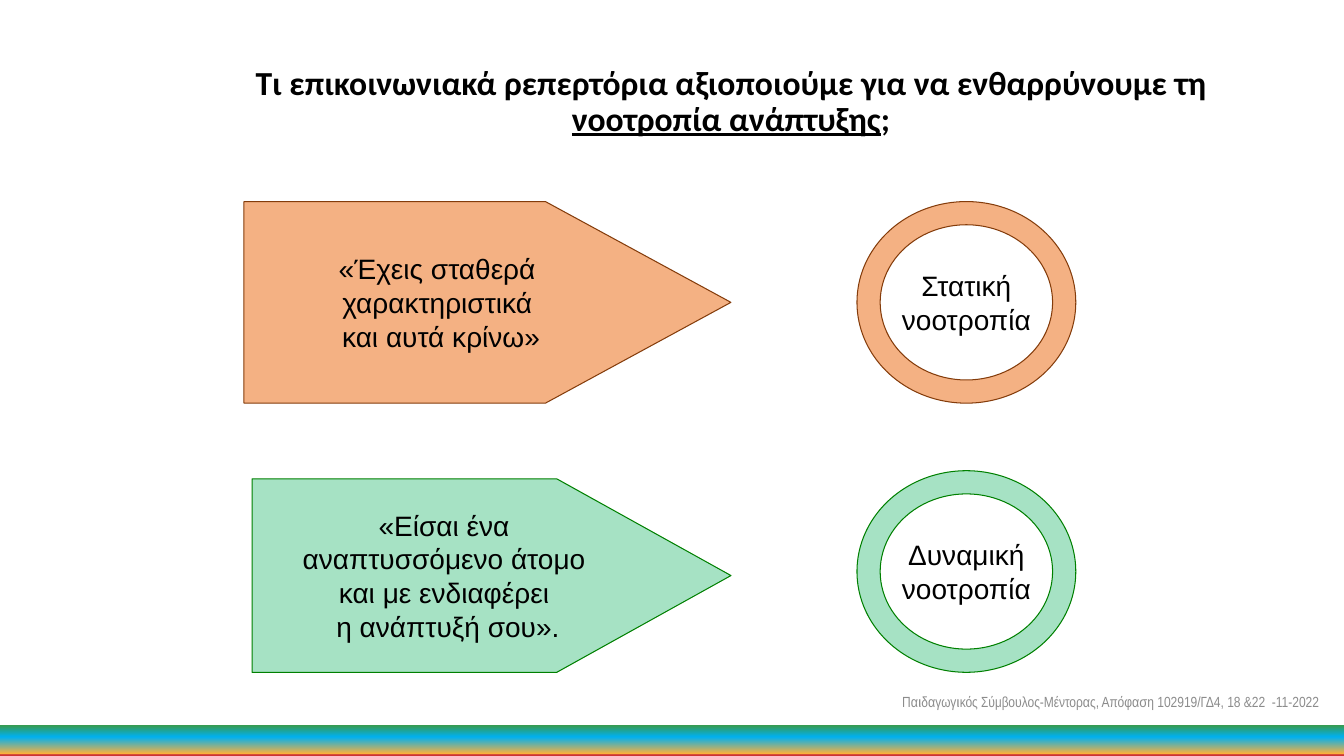
from dataclasses import dataclass

from lxml.etree import SubElement
from pptx import Presentation
from pptx.dml.color import RGBColor
from pptx.enum.shapes import MSO_SHAPE as Preset
from pptx.enum.text import MSO_ANCHOR as Anchor, PP_ALIGN as Align
from pptx.oxml.ns import qn
from pptx.shapes.autoshape import Shape
from pptx.slide import Slide
from pptx.text.text import TextFrame
from pptx.util import Inches, Pt

SLIDE_W, SLIDE_H = 13.33, 7.5
BLACK = "000000"


@dataclass(frozen=True)
class Box:
    left: float
    top: float
    width: float
    height: float

    def lengths(self) -> list[Inches]:
        return [Inches(v) for v in (self.left, self.top, self.width, self.height)]


@dataclass(frozen=True)
class Figure:
    preset: Preset
    box: Box
    adjustment: float
    text: str


@dataclass(frozen=True)
class Mindset:
    fill: str
    line: str
    phrase: Figure
    name: Figure


MINDSETS = [
    Mindset(
        "F4B183", "843C0B",
        Figure(Preset.PENTAGON, Box(2.42, 2, 4.83, 2), 0.92,
               "«Έχεις σταθερά \nχαρακτηριστικά \nκαι αυτά κρίνω»"),
        Figure(Preset.DONUT, Box(8.5, 2, 2.17, 2), 0.115, "Στατική\nνοοτροπία"),
    ),
    Mindset(
        "A6E2C4", "008000",
        Figure(Preset.PENTAGON, Box(2.5, 4.75, 4.75, 1.92), 0.9,
               "«Είσαι ένα \nαναπτυσσόμενο άτομο \nκαι με ενδιαφέρει \nη ανάπτυξή σου»."),
        Figure(Preset.DONUT, Box(8.5, 4.67, 2.17, 2), 0.115, "Δυναμική\nνοοτροπία"),
    ),
]

TITLE_PARTS = [
    ("Τι επικοινωνιακά ρεπερτόρια αξιοποιούμε για να ενθαρρύνουμε τη ", False),
    ("νοοτροπία ανάπτυξης", True),
    (";", False),
]
FOOTER = "Παιδαγωγικός Σύμβουλος-Μέντορας, Απόφαση 102919/ΓΔ4, 18 &22  -11-2022"
BAND_STOPS = [(0, "399A48"), (39, "00B0F0"), (93, "FBB03B"), (96, "CC3333")]


def rgb(color: str) -> RGBColor:
    return RGBColor.from_string(color)


def style_text(frame: TextFrame, font: str, size: float, color: str,
               align: Align, wrap: bool) -> None:
    frame.word_wrap = wrap
    frame.vertical_anchor = Anchor.MIDDLE
    for paragraph in frame.paragraphs:
        paragraph.alignment = align
        for run in paragraph.runs:
            run.font.name = font
            run.font.size = Pt(size)
            run.font.color.rgb = rgb(color)


def add_preset(slide: Slide, preset: Preset, box: Box) -> Shape:
    shape = slide.shapes.add_shape(preset, *box.lengths())
    shape.shadow.inherit = False
    return shape


def add_figure(slide: Slide, figure: Figure, fill: str, line: str) -> None:
    shape = add_preset(slide, figure.preset, figure.box)
    shape.adjustments[0] = figure.adjustment
    shape.fill.solid()
    shape.fill.fore_color.rgb = rgb(fill)
    shape.line.color.rgb = rgb(line)
    shape.line.width = Pt(0.75)
    shape.text_frame.text = figure.text
    style_text(shape.text_frame, "Arial", 20, BLACK, Align.CENTER, wrap=False)


def add_title(slide: Slide) -> None:
    frame = slide.shapes.add_textbox(*Box(2.25, 0.29, 10, 1.45).lengths()).text_frame
    heading = frame.paragraphs[0]
    heading.line_spacing = 0.9
    for text, underlined in TITLE_PARTS:
        run = heading.add_run()
        run.text = text
        run.font.bold = True
        run.font.underline = underlined
    style_text(frame, "Calibri", 24, BLACK, Align.CENTER, wrap=True)


def add_footer(slide: Slide) -> None:
    frame = slide.shapes.add_textbox(*Box(8.85, 6.76, 4.48, 0.4).lengths()).text_frame
    frame.text = FOOTER
    style_text(frame, "Arial Narrow", 10.5, "8C8C8C", Align.LEFT, wrap=True)


def add_band(slide: Slide) -> None:
    """Add the bottom strip with its vertical four-colour gradient."""
    height = 0.31
    band = add_preset(slide, Preset.RECTANGLE, Box(0, SLIDE_H - height, SLIDE_W, height))
    band.line.fill.background()
    band.fill.gradient()
    band.fill.gradient_angle = 270
    stops = band._element.spPr.find(qn("a:gradFill")).find(qn("a:gsLst"))
    for stop in list(stops):
        stops.remove(stop)
    for percent, color in BAND_STOPS:
        stop = SubElement(stops, qn("a:gs"), pos=str(percent * 1000))
        SubElement(stop, qn("a:srgbClr"), val=color)


def main() -> None:
    deck = Presentation()
    deck.slide_width, deck.slide_height = Inches(SLIDE_W), Inches(SLIDE_H)
    slide = deck.slides.add_slide(deck.slide_layouts[6])
    add_title(slide)
    for mindset in MINDSETS:
        for figure in (mindset.phrase, mindset.name):
            add_figure(slide, figure, mindset.fill, mindset.line)
    add_footer(slide)
    add_band(slide)
    deck.save("out.pptx")


if __name__ == "__main__":
    main()
